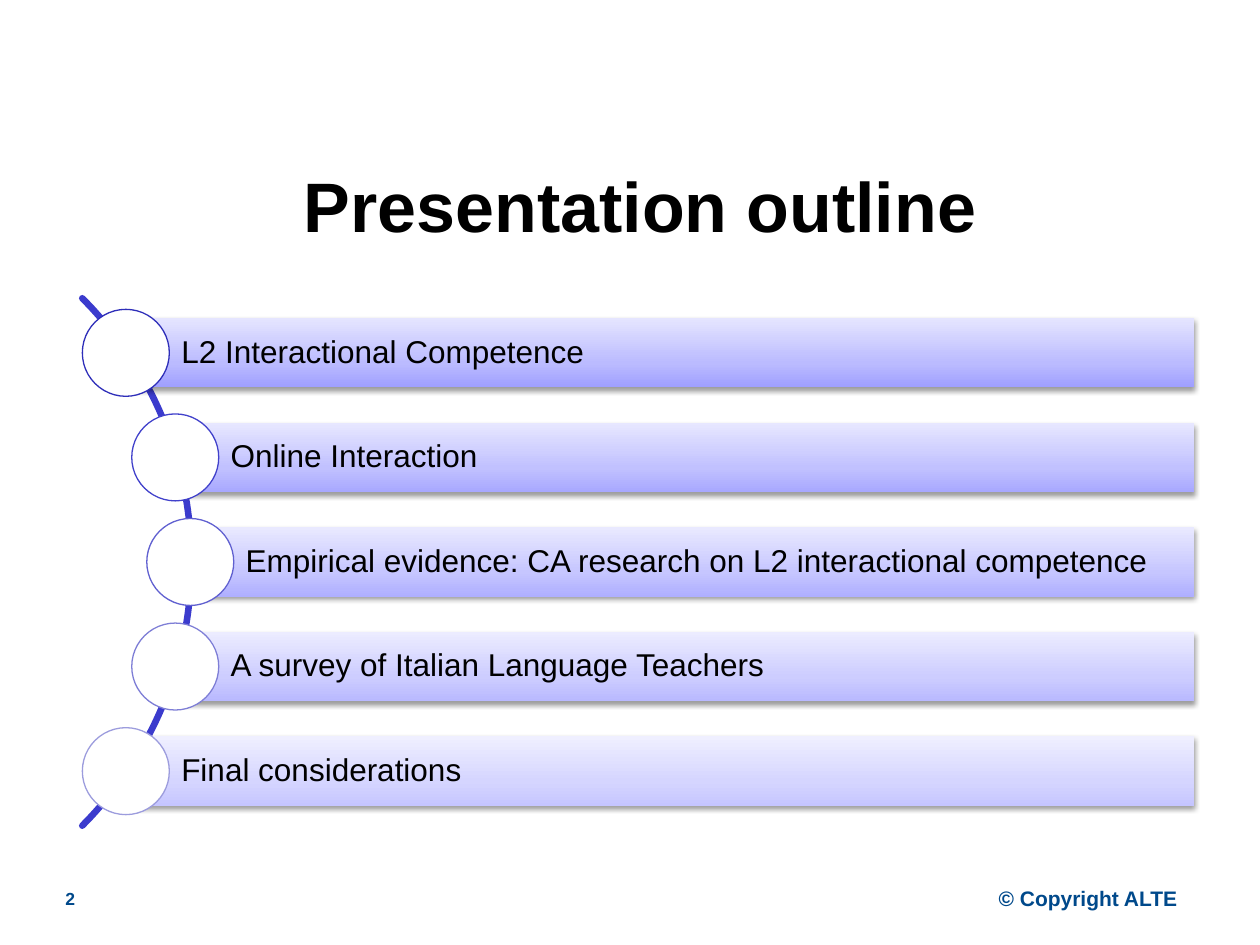
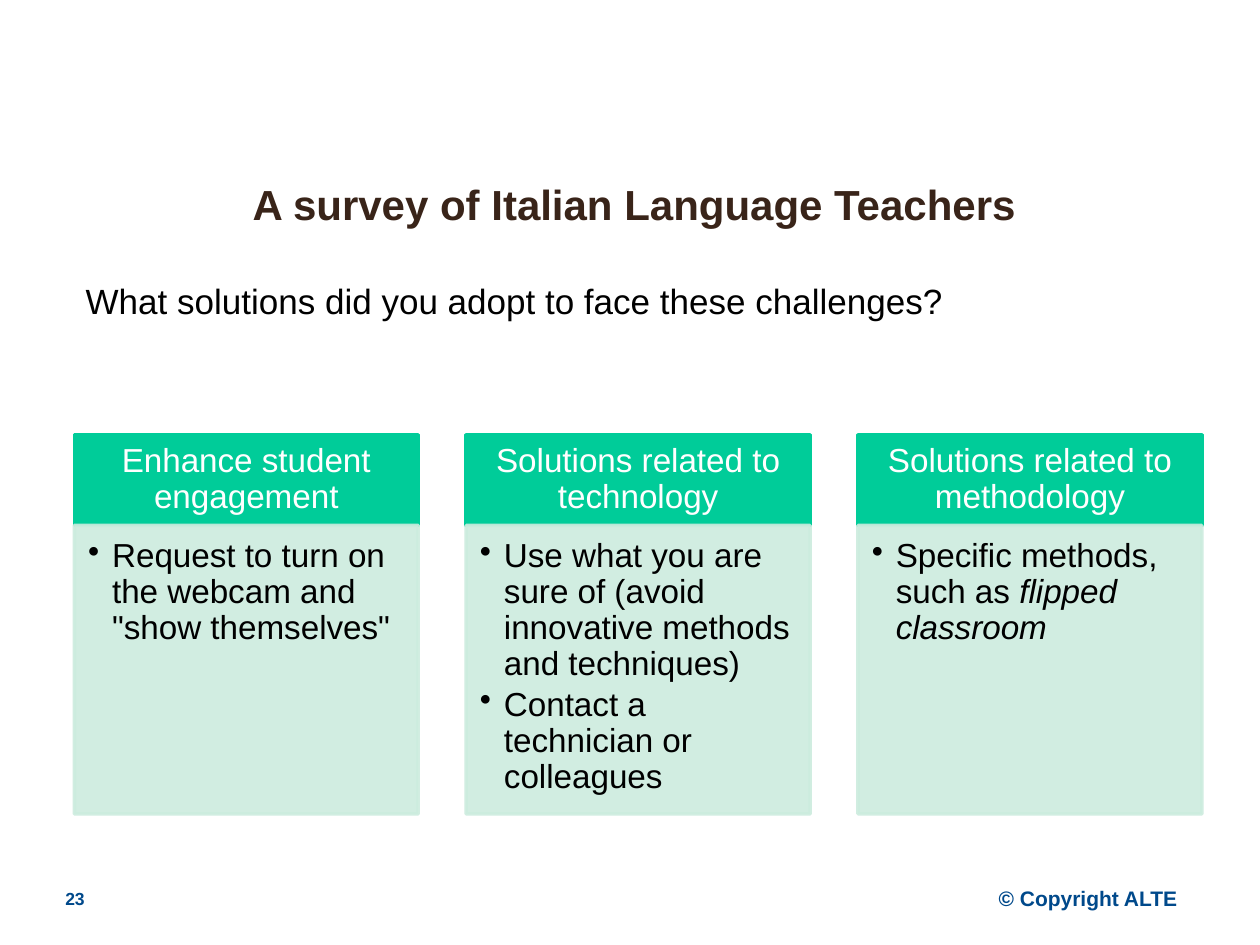
"""Build the outline slide and the survey solutions slide."""
from math import cos, hypot, radians, sin, sqrt

from lxml import etree
from pptx import Presentation
from pptx.dml.color import RGBColor
from pptx.enum.shapes import MSO_SHAPE as Shape
from pptx.enum.text import MSO_ANCHOR as Anchor, MSO_AUTO_SIZE as Fit, PP_ALIGN as Align
from pptx.oxml import parse_xml
from pptx.oxml.ns import nsdecls, qn
from pptx.util import Inches, Pt

COPY = "© Copyright ALTE"
TOPICS = [
    "L2 Interactional Competence",
    "Online Interaction",
    "Empirical evidence: CA research on L2 interactional competence",
    "A survey of Italian Language Teachers",
    "Final considerations",
]
ASK = "What solutions did you adopt to face these challenges?"
CARDS = [
    ("Enhance student engagement",
     [['Request to turn on the webcam and "show themselves"']]),
    ("Solutions related to technology",
     [["Use what you are sure of (avoid innovative methods and techniques)"],
      ["Contact a technician or colleagues"]]),
    ("Solutions related to methodology",
     [["Specific methods, such as ", ("flipped classroom", True)]]),
]


class Theme:
    """Colours, font and type sizes of the deck."""
    font = "Arial"
    black, white, brown = "000000", "FFFFFF", "392419"
    navy, arc, green, mint = "00498B", "3B3BCD", "00CC99", "CCECDE"
    bars = [
        ("9F9FFF", "BBBBFF", "E5E5FF"),
        ("A8A8FF", "C1C1FF", "E7E7FF"),
        ("AFAFFF", "C6C6FF", "E9E9FF"),
        ("B9B9FF", "CDCDFF", "ECECFF"),
        ("C5C5FF", "D5D5FF", "EFEFFF"),
    ]
    rings = ["2E2EB9", "4141CB", "6060D0", "7E7ED6", "9C9CDD"]
    big, head, ask, card, bar, foot, page = 40, 24, 20, 19, 18, 12, 10


def rgb(code):
    """Turn a hex code into a colour."""
    return RGBColor.from_string(code)


def place(shape, *box):
    """Move a shape to left, top, width, height in inches."""
    shape.left, shape.top, shape.width, shape.height = map(Inches, box)


def write(shape, paras, size, color=Theme.black, bold=False, align=Align.LEFT,
          anchor=Anchor.TOP, inset=(0.1, 0.05, 0.1, 0.05), wrap=True,
          lines=1, after=0, hang=0):
    """Write paragraphs, each a list of runs, with one format."""
    frame = shape.text_frame
    frame.auto_size, frame.word_wrap = Fit.NONE, wrap
    frame.vertical_anchor = anchor
    (frame.margin_left, frame.margin_top,
     frame.margin_right, frame.margin_bottom) = map(Inches, inset)
    for i, runs in enumerate(paras):
        para = frame.add_paragraph() if i else frame.paragraphs[0]
        props = para._p.get_or_add_pPr()
        props.set("marL", str(Inches(hang)))
        props.set("indent", str(-Inches(hang)))
        if hang:
            etree.SubElement(props, qn("a:buChar"), char="•")
        else:
            etree.SubElement(props, qn("a:buNone"))
        para.alignment, para.line_spacing = align, lines
        para.space_before, para.space_after = Pt(0), Pt(after)
        for part in runs:
            text, slant = part if isinstance(part, tuple) else (part, False)
            run = para.add_run()
            run.text = text
            font = run.font
            font.name, font.size = Theme.font, Pt(size)
            font.bold, font.italic = bold, slant
            font.color.rgb = rgb(color)


def paint(shape, fill=None, line=None, width=2.0):
    """Set fill and line, and drop the shadow."""
    shape.shadow.inherit = False
    if fill:
        shape.fill.solid()
        shape.fill.fore_color.rgb = rgb(fill)
    else:
        shape.fill.background()
    if line:
        shape.line.color.rgb = rgb(line)
        shape.line.width = Pt(width)
    else:
        shape.line.fill.background()


def draw(slide, kind, *box, **look):
    """Add a painted preset shape."""
    shape = slide.shapes.add_shape(kind, *map(Inches, box))
    paint(shape, **look)
    return shape


def shade(bar, tones):
    """Give a bar its upward gradient and soft shadow."""
    props = bar._element.spPr
    stops = "".join(f'<a:gs pos="{pos}"><a:srgbClr val="{tone}"/></a:gs>'
                    for pos, tone in zip((0, 35000, 100000), tones))
    props.replace(props.find(qn("a:noFill")), parse_xml(
        f'<a:gradFill {nsdecls("a")} rotWithShape="1"><a:gsLst>{stops}</a:gsLst>'
        '<a:lin ang="16200000" scaled="0"/></a:gradFill>'))
    props.find(qn("a:effectLst")).append(parse_xml(
        f'<a:outerShdw {nsdecls("a")} blurRad="{Pt(3.1)}" dist="{Pt(1.6)}" '
        'dir="5400000" rotWithShape="0"><a:srgbClr val="000000">'
        '<a:alpha val="38000"/></a:srgbClr></a:outerShdw>'))


def fade(shape, share):
    """Make the fill and line of a shape partly clear."""
    for tone in shape._element.spPr.iter(qn("a:srgbClr")):
        etree.SubElement(tone, qn("a:alpha"), val=str(share * 1000))


def start(deck, layout, title, page, size, color):
    """Add a slide with its title, page number and footer."""
    slide = deck.slides.add_slide(deck.slide_layouts[layout])
    place(slide.shapes.title, 0.58, 1.08, 9, 1.08)
    write(slide.shapes.title, [[title]], size, color, bold=True,
          align=Align.CENTER, anchor=Anchor.MIDDLE)
    num = slide.shapes.add_textbox(*map(Inches, (0.42, 7, 0.67, 0.27)))
    write(num, [[page]], Theme.page, Theme.navy, bold=True)
    foot = slide.shapes.add_textbox(*map(Inches, (7.79, 6.98, 1.69, 0.3)))
    write(foot, [[COPY]], Theme.foot, Theme.navy, bold=True,
          align=Align.CENTER, wrap=False)
    return slide


def outline(deck):
    """Lay the topics along an arc."""
    slide = start(deck, 5, "Presentation outline", "2", Theme.big, Theme.black)
    mid_x, mid_y, reach, step = -1.44, 4.46, 2.95, 0.83
    high, dot, right = 0.55, 0.69, 9.48
    curve = [(Inches(mid_x + (reach + 0.01) * cos(radians(turn))),
              Inches(mid_y + (reach + 0.01) * sin(radians(turn))))
             for turn in range(-45, 46)]
    pen = slide.shapes.build_freeform(*curve[0])
    pen.add_line_segments(curve[1:], close=False)
    arc = pen.convert_to_shape()
    paint(arc, line=Theme.arc, width=3.75)
    arc.line._ln.set("cap", "rnd")
    for i, (topic, tones, ring) in enumerate(zip(TOPICS, Theme.bars, Theme.rings)):
        drop = (i - len(TOPICS) // 2) * step
        x, y = mid_x + sqrt(reach ** 2 - drop ** 2), mid_y + drop
        bar = draw(slide, Shape.RECTANGLE, x, y - high / 2, right - x, high)
        shade(bar, tones)
        write(bar, [[topic]], Theme.bar, anchor=Anchor.MIDDLE,
              inset=(0.44, 0.05, 0.05, 0.05), lines=0.9)
        draw(slide, Shape.OVAL, x - dot / 2, y - dot / 2, dot, dot,
             fill=Theme.white, line=ring, width=0.75)


def survey(deck):
    """Set the solutions in a row of cards."""
    slide = start(deck, 1, "A survey of Italian Language Teachers ", "23",
                  Theme.head, Theme.brown)
    body = slide.placeholders[1]
    place(body, 0.58, 2.17, 8.72, 0.44)
    write(body, [[ASK]], Theme.ask)
    left, top, wide, step, cap, deep = 0.59, 3.45, 2.73, 3.11, 0.72, 2.29
    for i, (name, points) in enumerate(CARDS):
        x = left + i * step
        head = draw(slide, Shape.RECTANGLE, x, top, wide, cap,
                    fill=Theme.green, line=Theme.green)
        write(head, [[name]], Theme.card, Theme.white, align=Align.CENTER,
              anchor=Anchor.MIDDLE, inset=(0.15, 0.08, 0.15, 0.08), lines=0.9)
        card = draw(slide, Shape.RECTANGLE, x, top + cap, wide, deep,
                    fill=Theme.mint, line=Theme.mint)
        fade(card, 90)
        write(card, points, Theme.card, inset=(0.11, 0.11, 0.15, 0.17),
              lines=0.9, after=2.85, hang=0.19)


def main():
    """Build and save the deck."""
    deck = Presentation()
    deck.slide_width, deck.slide_height = Inches(10), Inches(7.5)
    outline(deck)
    survey(deck)
    deck.save("out.pptx")


if __name__ == "__main__":
    main()
